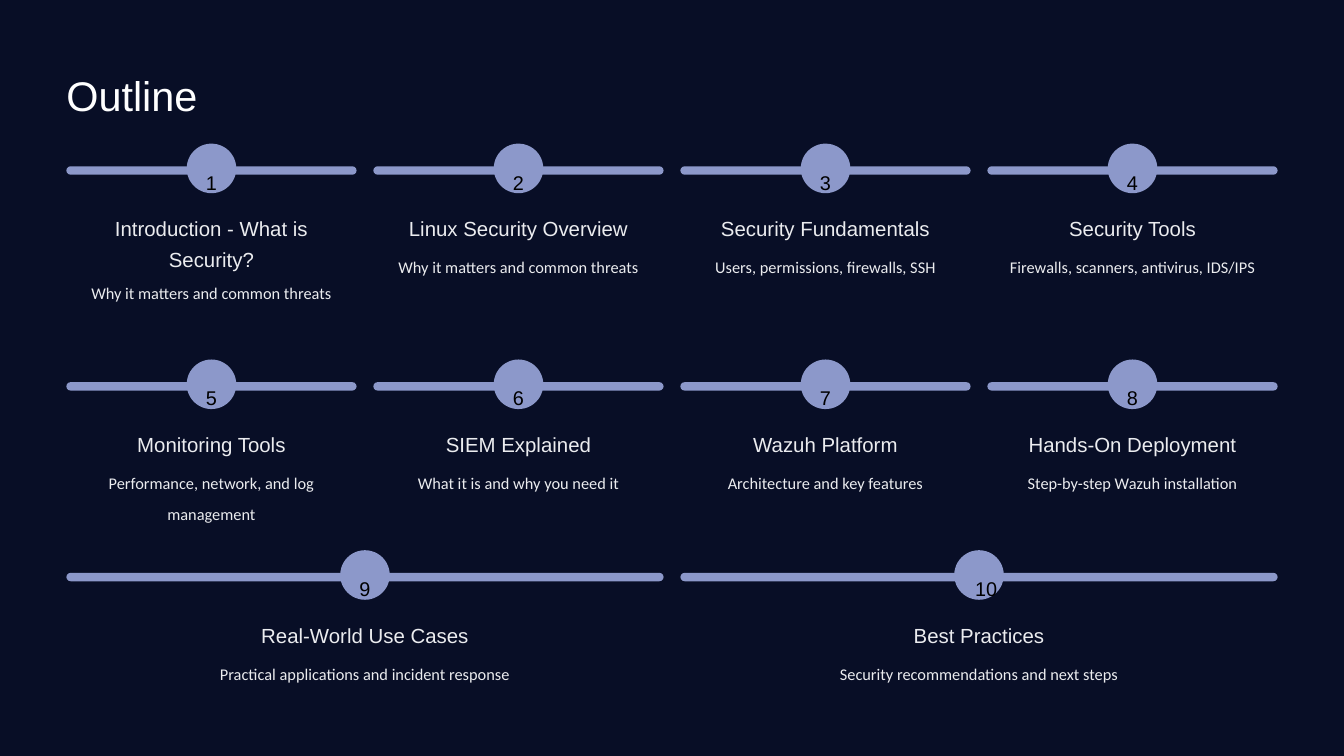
from dataclasses import dataclass

from pptx import Presentation
from pptx.dml.color import RGBColor
from pptx.enum.shapes import MSO_SHAPE
from pptx.enum.text import PP_ALIGN
from pptx.util import Inches, Pt


@dataclass(frozen=True)
class Theme:
    back: str = "080E26"
    accent: str = "8C98CA"
    title: str = "FFFFFF"
    text: str = "EBECEF"
    number: str = "000000"
    head_font: str = "Arial"
    body_font: str = "Calibri"
    title_size: float = 35.5
    head_size: float = 17.5
    number_size: float = 17
    body_size: float = 14


WIDTH, HEIGHT = 16, 9
MARGIN, GAP, COLUMNS = 0.79, 0.2, 4
COLUMN = (WIDTH - 2 * MARGIN - (COLUMNS - 1) * GAP) / COLUMNS
ROW_TOPS = (1.98, 4.55, 6.82)
BAR, DOT, PAD = 0.1, 0.59, 0.22
HEAD_LINE, BODY_LINE = 0.31, 0.32

# Each row of the grid: heading, detail, lines in the heading, lines in the detail
TOPICS = (
    (
        ("Introduction - What is Security?", "Why it matters and common threats", 2, 1),
        ("Linux Security Overview", "Why it matters and common threats", 1, 1),
        ("Security Fundamentals", "Users, permissions, firewalls, SSH", 1, 1),
        ("Security Tools", "Firewalls, scanners, antivirus, IDS/IPS", 1, 1),
    ),
    (
        ("Monitoring Tools", "Performance, network, and log management", 1, 2),
        ("SIEM Explained", "What it is and why you need it", 1, 1),
        ("Wazuh Platform", "Architecture and key features", 1, 1),
        ("Hands-On Deployment", "Step-by-step Wazuh installation", 1, 1),
    ),
    (
        ("Real-World Use Cases", "Practical applications and incident response", 1, 1),
        ("Best Practices", "Security recommendations and next steps", 1, 1),
    ),
)


class OutlineSlide:
    def __init__(self, prs, theme):
        self.theme = theme
        self.s = prs.slides.add_slide(prs.slide_layouts[6])
        fill = self.s.background.fill
        fill.solid()
        fill.fore_color.rgb = RGBColor.from_string(theme.back)

    def text(self, text, x, y, w, h, *, size, color, font, spacing, align=PP_ALIGN.CENTER):
        tf = self.s.shapes.add_textbox(Inches(x), Inches(y), Inches(w), Inches(h)).text_frame
        tf.word_wrap = True
        tf.margin_left = tf.margin_top = tf.margin_right = tf.margin_bottom = 0
        p = tf.paragraphs[0]
        p.alignment = align
        p.line_spacing = spacing
        r = p.add_run()
        r.text = text
        r.font.name = font
        r.font.size = Pt(size)
        r.font.color.rgb = RGBColor.from_string(color)

    def pill(self, x, y, w, h):
        """Add an accent shape whose ends are fully rounded."""
        sp = self.s.shapes.add_shape(
            MSO_SHAPE.ROUNDED_RECTANGLE, Inches(x), Inches(y), Inches(w), Inches(h))
        sp.adjustments[0] = 0.5
        sp.shadow.inherit = False
        sp.fill.solid()
        sp.fill.fore_color.rgb = RGBColor.from_string(self.theme.accent)
        sp.line.fill.background()

    def title(self, text):
        t = self.theme
        self.text(text, MARGIN, 0.69, 4.94, 0.62, size=t.title_size, color=t.title,
                  font=t.head_font, spacing=1.24, align=PP_ALIGN.LEFT)

    def topic(self, number, col, row, span, heading, detail, head_lines, body_lines):
        t = self.theme
        x, y = MARGIN + col * (COLUMN + GAP), ROW_TOPS[row]
        w = span * COLUMN + (span - 1) * GAP
        middle = x + w / 2
        self.pill(x, y, w, BAR)
        self.pill(middle - DOT / 2, y - 0.27, DOT, DOT)
        number_width = 0.24 if number < 10 else 0.41
        self.text(str(number), middle - 0.12, y - 0.12, number_width, 0.3,
                  size=t.number_size, color=t.number, font=t.head_font, spacing=1.59)
        inner = w - 2 * PAD
        head_height = head_lines * HEAD_LINE
        self.text(heading, x + PAD, y + 0.52, inner, head_height,
                  size=t.head_size, color=t.text, font=t.head_font, spacing=1.26)
        self.text(detail, x + PAD, y + 0.63 + head_height, inner, body_lines * BODY_LINE,
                  size=t.body_size, color=t.text, font=t.body_font, spacing=1.61)


def main():
    prs = Presentation()
    prs.slide_width, prs.slide_height = Inches(WIDTH), Inches(HEIGHT)
    slide = OutlineSlide(prs, Theme())
    slide.title("Outline")
    number = 0
    for row, topics in enumerate(TOPICS):
        span = COLUMNS // len(topics)
        for i, topic in enumerate(topics):
            number += 1
            slide.topic(number, i * span, row, span, *topic)
    prs.save("out.pptx")


if __name__ == "__main__":
    main()
